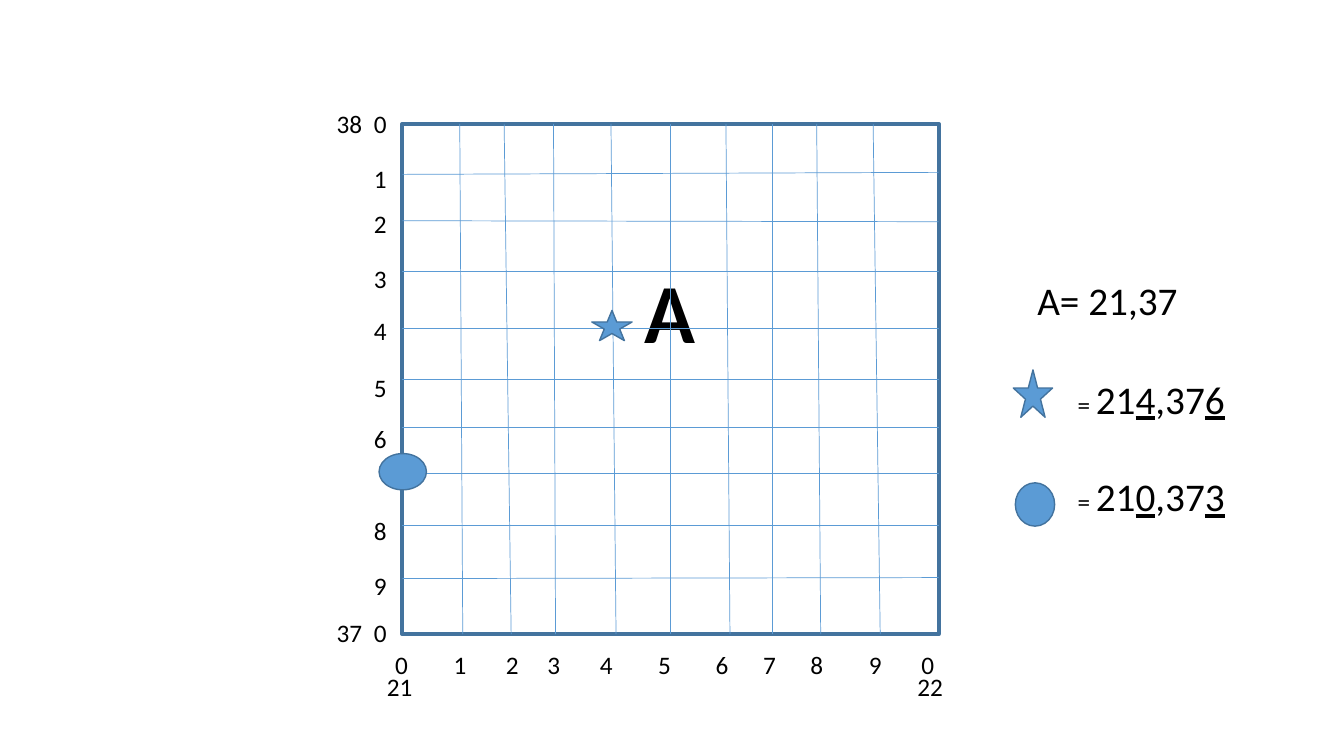
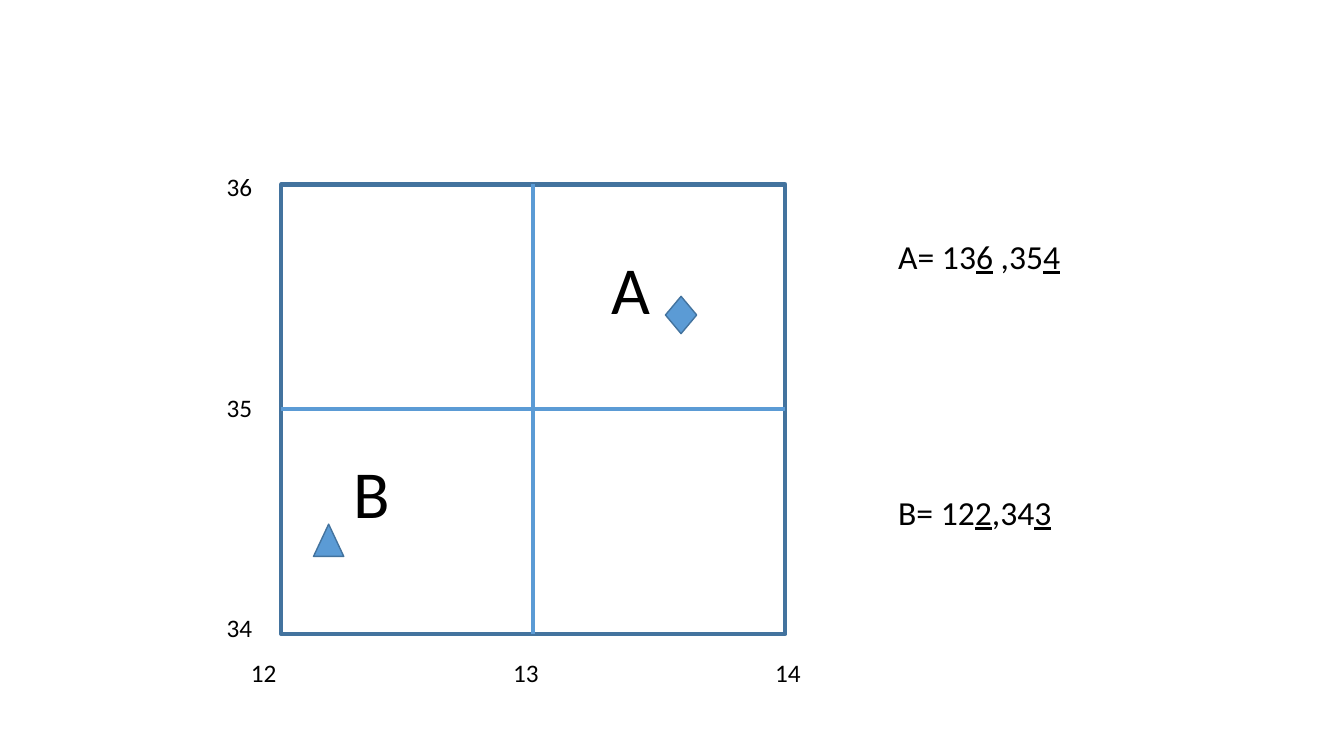
import pptx
import pptx.dml.color
import pptx.enum.shapes
import pptx.enum.text
import pptx.oxml
import pptx.oxml.ns
import pptx.util

Inches = pptx.util.Inches
Pt = pptx.util.Pt
Kind = pptx.enum.shapes.MSO_SHAPE
STRAIGHT = pptx.enum.shapes.MSO_CONNECTOR.STRAIGHT
TOP, LEFT, BOTTOM, RIGHT = range(4)

COLORS = {"fill": "5B9BD5", "edge": "43739E", "grid": "5B9BD5", "text": "000000"}
RGB = {name: pptx.dml.color.RGBColor.from_string(code) for name, code in COLORS.items()}
BODY, ANSWER, POINT = 18, 24, 48
INSET = 0.1

deck = pptx.Presentation()
deck.slide_width, deck.slide_height = Inches(13.33), Inches(7.5)
blank = deck.slide_layouts[6]
tenths = deck.slides.add_slide(blank)
squares = deck.slides.add_slide(blank)


def write(slide, x, y, wide, text, size=BODY, lead="", bold=False):
    """Add a text box; parts between underscores are underlined, lead keeps body size."""
    high = size / 60 + INSET
    box = slide.shapes.add_textbox(Inches(x), Inches(y), Inches(wide), Inches(high))
    box.text_frame.word_wrap = True
    line = box.text_frame.paragraphs[0]
    parts = [(lead, BODY, None)]
    parts += [(part, size, True if rank % 2 else None)
              for rank, part in enumerate(text.split("_"))]
    for part, points, under in parts:
        if not part:
            continue
        run = line.add_run()
        run.text = part
        style = {"name": "Calibri", "size": Pt(points), "bold": bold, "underline": under}
        for key, value in style.items():
            setattr(run.font, key, value)
        run.font.color.rgb = RGB["text"]
    return line


def draw(slide, kind, x, y, wide, high, filled=True):
    """Add a filled marker, or an open frame with a heavy edge."""
    shape = slide.shapes.add_shape(kind, Inches(x), Inches(y), Inches(wide), Inches(high))
    shape.shadow.inherit = False
    if filled:
        shape.fill.solid()
        shape.fill.fore_color.rgb = RGB["fill"]
    else:
        shape.fill.background()
    shape.line.color.rgb = RGB["edge"]
    shape.line.width = Pt(1 if filled else 3)
    return shape


# The big letter lies under the grid lines
letter = write(tenths, 5.63, 2.53, 2.03, "A", 60, bold=True)
letter.alignment = pptx.enum.text.PP_ALIGN.CENTER

# Inner lines of the tenths, hand-drawn: where each starts and how far it leans
columns = {4.56: 0.03, 5: 0.07, 5.49: 0.02, 6.06: 0.05,
           7.2: 0.04, 7.66: 0, 8.1: 0.04, 8.66: 0.07}
rows = {1.73: -0.02, 2.19: 0.01, 2.69: 0, 3.26: 0,
        4.24: 0, 4.7: 0, 5.21: 0, 5.74: -0.01}

# Each grid: a frame, two middle lines joined to it, and any further lines
for page, x, y, wide, high, weight, downs, acrosses in [
    (tenths, 3.99, 1.23, 5.32, 5.06, 0.5, columns, rows),
    (squares, 2.79, 1.83, 5, 4.46, 3, {}, {}),
]:
    frame = draw(page, Kind.RECTANGLE, x, y, wide, high, filled=False)
    right, foot = x + wide, y + high
    midx, midy = x + wide / 2, y + high / 2
    lines = [((midx, y, midx, foot), (TOP, BOTTOM)),
             ((x, midy, right, midy), (LEFT, RIGHT))]
    lines += [((at, y, at + lean, foot), None) for at, lean in downs.items()]
    lines += [((x, at, right, at + lean), None) for at, lean in acrosses.items()]
    for ends, sides in lines:
        line = page.shapes.add_connector(STRAIGHT, *map(Inches, ends))
        if sides:
            line.begin_connect(frame, sides[0])
            line.end_connect(frame, sides[1])
        line.line.color.rgb = RGB["grid"]
        line.line.width = Pt(weight)
        props = line._element.spPr
        props.append(props.makeelement(pptx.oxml.ns.qn("a:effectLst"), {}))

# Grid numbers: eastings run right along the foot, northings run up the side
for page, y, x, step, numbers in [
    (tenths, 6.61, 3.74, 5.26, ["21", "22"]),
    (squares, 6.47, 2.39, 2.6, ["12", "13", "14"]),
]:
    for rank, number in enumerate(numbers):
        write(page, x + rank * step, y, 0.6, number)
for page, x, y, step, numbers in [
    (tenths, 3.24, 6.08, 5.05, ["37", "38"]),
    (squares, 2.15, 6.03, 2.19, ["34", "35", "36"]),
]:
    for rank, number in enumerate(numbers):
        write(page, x, y - rank * step, 0.6, number)

# Tenths down the side; the circle takes the place of the 7
heights = [1.03, 1.57, 2.02, 2.56, 3.08, 3.64, 4.15, None, 5.06, 5.61, 6.08]
for tenth, y in enumerate(heights):
    if y is not None:
        write(tenths, 3.61, y, 0.37, str(tenth % 10))

# Tenths along the foot: one line of text with a tab stop for each digit
left = 3.76
offsets = [0.06, 0.64, 1.16, 1.57, 2.09, 2.67, 3.24, 3.71, 4.18, 4.76, 5.28]
digits = "".join(f"\t{tenth % 10}" for tenth in range(len(offsets)))
scale = write(tenths, left, 6.39, 5.79, digits)
props = scale._p.get_or_add_pPr()
stops = props.makeelement(pptx.oxml.ns.qn("a:tabLst"), {})
props.append(stops)
for offset in offsets:
    stop = {"pos": str(Inches(offset)), "algn": "l"}
    stops.append(stops.makeelement(pptx.oxml.ns.qn("a:tab"), stop))

# Markers on the grids, and the same signs in the key
for page, kind, *place in [
    (tenths, Kind.STAR_5_POINT, 5.87, 3.08, 0.4, 0.3),
    (tenths, Kind.STAR_5_POINT, 10.05, 3.67, 0.39, 0.47),
    (tenths, Kind.OVAL, 3.76, 4.5, 0.47, 0.36),
    (tenths, Kind.OVAL, 10.07, 4.79, 0.39, 0.43),
    (squares, Kind.DIAMOND, 6.6, 2.94, 0.31, 0.37),
    (squares, Kind.ISOSCELES_TRIANGLE, 3.11, 5.2, 0.3, 0.32),
]:
    draw(page, kind, *place)

# Answers for the tenths
write(tenths, 10.19, 2.69, 1.71, "A= 21,37", 28)
for y, answer in [(3.67, "21_4_,37_6_"), (4.64, "21_0_,37_3_")]:
    write(tenths, 10.59, y, 1.87, answer, 28, lead="= ")

# Point names and answers for the squares
for name, x, y in [("A", 5.97, 2.4), ("B", 3.41, 4.43)]:
    write(squares, x, y, 1.1, name, POINT)
for y, answer in [(2.29, "A= 13_6_ ,35_4_"), (4.83, "B= 12_2_,34_3_")]:
    write(squares, 8.81, y, 2.31, answer, ANSWER)

deck.save("out.pptx")
